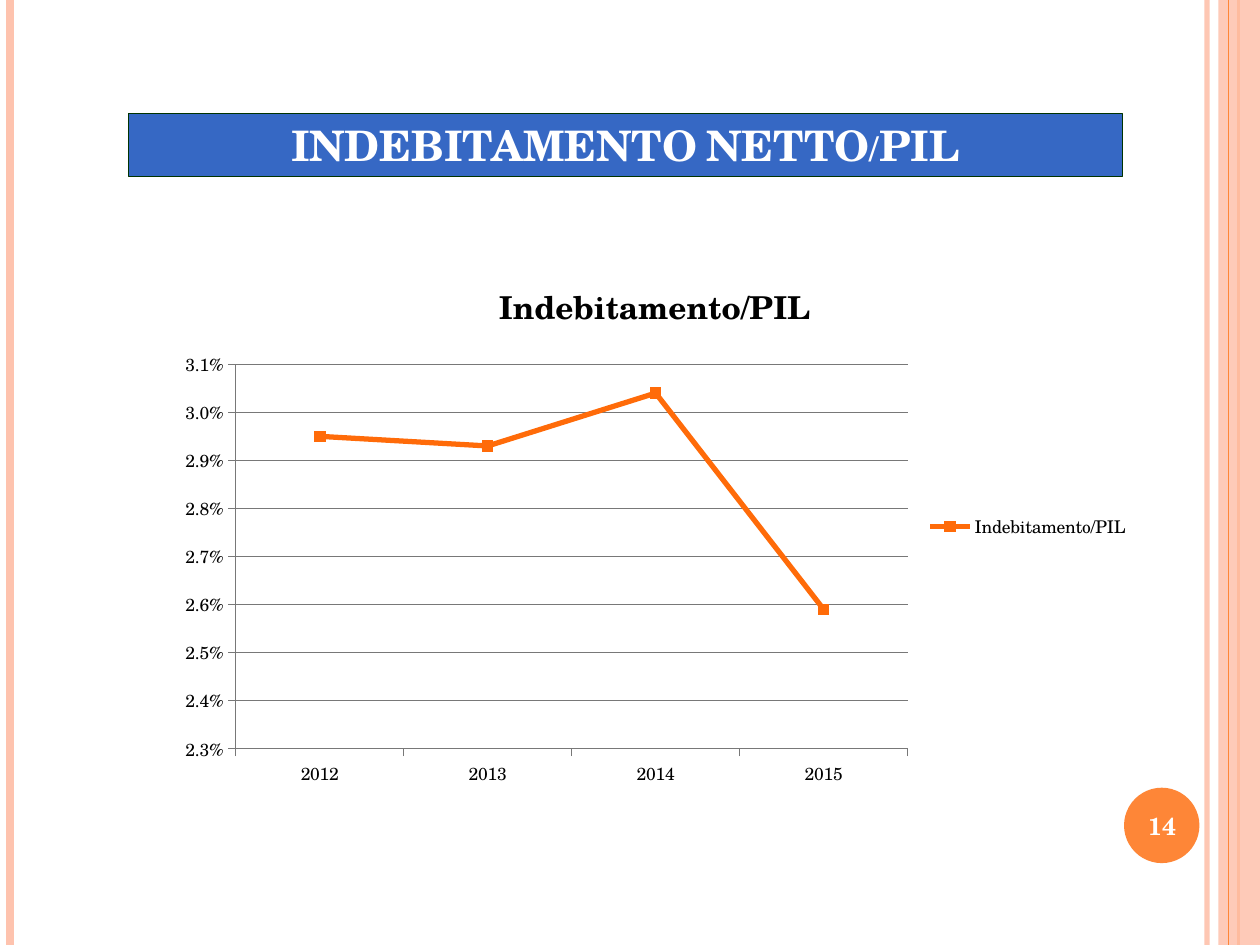
from lxml import etree
from pptx import Presentation
from pptx.chart.data import CategoryChartData
from pptx.dml.color import RGBColor
from pptx.enum.chart import XL_CHART_TYPE, XL_LEGEND_POSITION, XL_MARKER_STYLE, XL_TICK_MARK
from pptx.enum.shapes import MSO_CONNECTOR, MSO_SHAPE
from pptx.enum.text import MSO_ANCHOR, PP_ALIGN
from pptx.oxml import parse_xml
from pptx.oxml.ns import nsdecls, qn
from pptx.util import Cm, Pt

RECTANGLE, OVAL = MSO_SHAPE.RECTANGLE, MSO_SHAPE.OVAL
STRAIGHT = MSO_CONNECTOR.STRAIGHT
CENTER = PP_ALIGN.CENTER
MIDDLE, BOTTOM = MSO_ANCHOR.MIDDLE, MSO_ANCHOR.BOTTOM
LINE_MARKERS = XL_CHART_TYPE.LINE_MARKERS
SQUARE = XL_MARKER_STYLE.SQUARE
LEGEND_RIGHT = XL_LEGEND_POSITION.RIGHT
TICK_OUTSIDE, TICK_NONE = XL_TICK_MARK.OUTSIDE, XL_TICK_MARK.NONE

WIDTH, HEIGHT = 25.4, 19.05
FONT = "TeX Gyre Schola"
PEACH, ORANGE, BRIGHT_ORANGE = "FEC3AE", "FE8637", "FF6B09"
BLUE, DARK_GREEN, GRAY = "3668C4", "003300", "787878"
WHITE, BLACK = "FFFFFF", "000000"


def color(hex_string):
    return RGBColor.from_string(hex_string)


class SlideBuilder:
    """Holds the style and the current slide."""

    def __init__(self, slide, font):
        self.slide = slide
        self.font = font

    def style_font(self, font, size, hex_string, bold=False):
        font.name = self.font
        font.size = Pt(size)
        font.bold = bold
        font.color.rgb = color(hex_string)

    def style_line(self, line, hex_string, width):
        line.color.rgb = color(hex_string)
        line.width = Pt(width)

    def set_opacity(self, shape, percent):
        fill_color = shape._element.spPr.find(".//" + qn("a:srgbClr"))
        alpha = etree.SubElement(fill_color, qn("a:alpha"))
        alpha.set("val", str(percent * 1000))

    def vertical_line(self, x, hex_string, width, opacity=100):
        line = self.slide.shapes.add_connector(STRAIGHT, Cm(x), Cm(0), Cm(x), Cm(HEIGHT))
        self.style_line(line.line, hex_string, width)
        etree.SubElement(line._element.spPr, qn("a:effectLst"))
        if opacity < 100:
            self.set_opacity(line, opacity)

    def shape(self, kind, left, top, width, height, fill, outline=None, opacity=100):
        shape = self.slide.shapes.add_shape(kind, Cm(left), Cm(top), Cm(width), Cm(height))
        shape.shadow.inherit = False
        shape.fill.solid()
        shape.fill.fore_color.rgb = color(fill)
        if outline:
            self.style_line(shape.line, outline, 0.75)
        else:
            shape.line.fill.background()
        if opacity < 100:
            self.set_opacity(shape, opacity)
        return shape

    def add_text(self, shape, text, size, anchor):
        frame = shape.text_frame
        frame.word_wrap = True
        frame.vertical_anchor = anchor
        paragraph = frame.paragraphs[0]
        paragraph.alignment = CENTER
        run = paragraph.add_run()
        run.text = text
        self.style_font(run.font, size, WHITE, bold=True)
        return run

    def text_box(self, left, top, width, height, text, size):
        box = self.slide.shapes.add_textbox(Cm(left), Cm(top), Cm(width), Cm(height))
        self.add_text(box, text, size, MIDDLE)

    def line_chart(self, left, top, width, height, name, categories, values):
        data = CategoryChartData(number_format="0.0%")
        data.categories = categories
        data.add_series(name, values)
        chart = self.slide.shapes.add_chart(
            LINE_MARKERS, Cm(left), Cm(top), Cm(width), Cm(height), data).chart
        self.style_font(chart.font, 10, BLACK)

        # Title and legend
        chart.has_title = True
        run = chart.chart_title.text_frame.paragraphs[0].add_run()
        run.text = name
        self.style_font(run.font, 18, BLACK, bold=True)
        chart.has_legend = True
        chart.legend.position = LEGEND_RIGHT
        chart.legend.include_in_layout = False

        # Series
        chart.plots[0].vary_by_categories = False
        series = chart.plots[0].series[0]
        series.smooth = False
        self.style_line(series.format.line, BRIGHT_ORANGE, 3)
        series.marker.style = SQUARE
        series.marker.size = 6
        series.marker.format.fill.solid()
        series.marker.format.fill.fore_color.rgb = color(BRIGHT_ORANGE)
        series.marker.format.line.fill.background()

        # Axes
        for axis in (chart.category_axis, chart.value_axis):
            axis.major_tick_mark = TICK_OUTSIDE
            axis.minor_tick_mark = TICK_NONE
            self.style_line(axis.format.line, GRAY, 0.75)
        axis = chart.value_axis
        axis.minimum_scale, axis.maximum_scale, axis.major_unit = 0.023, 0.031, 0.001
        axis.tick_labels.number_format = "0.0%"
        axis.tick_labels.number_format_is_linked = False
        axis.has_major_gridlines = True
        self.style_line(axis.major_gridlines.format.line, GRAY, 0.75)
        self.place_plot(chart, x=0.07, y=0.2, w=0.69, h=0.71)

    def place_plot(self, chart, **fractions):
        plot_area = chart._chartSpace.chart.plotArea
        for layout in plot_area.findall(qn("c:layout")):
            plot_area.remove(layout)
        sizes = "".join(f'<c:{key} val="{value}"/>' for key, value in fractions.items())
        plot_area.insert(0, parse_xml(
            f'<c:layout {nsdecls("c")}><c:manualLayout><c:layoutTarget val="inner"/>'
            f'<c:xMode val="edge"/><c:yMode val="edge"/>{sizes}'
            '</c:manualLayout></c:layout>'))


def main():
    presentation = Presentation()
    presentation.slide_width, presentation.slide_height = Cm(WIDTH), Cm(HEIGHT)
    slide = presentation.slides.add_slide(presentation.slide_layouts[6])
    builder = SlideBuilder(slide, FONT)

    # Side bands
    builder.vertical_line(24.33, PEACH, 3, opacity=93)
    builder.vertical_line(0.2, PEACH, 4.5)
    builder.vertical_line(24.97, ORANGE, 1.5)
    builder.shape(RECTANGLE, 24.56, 0, 0.84, HEIGHT, PEACH, opacity=87)
    builder.vertical_line(24.77, ORANGE, 0.75)

    # Title banner
    banner = builder.shape(RECTANGLE, 2.59, 2.29, 20.04, 1.27, BLUE, DARK_GREEN)
    title = builder.add_text(banner, "INDEBITAMENTO NETTO/PIL", 24, BOTTOM)
    title.font._element.set("cap", "small")

    # Deficit to GDP chart
    builder.line_chart(3.38, 5.16, 19.63, 10.92, "Indebitamento/PIL",
                       ["2012", "2013", "2014", "2015"],
                       [0.0295, 0.0293, 0.0304, 0.0259])

    # Page number
    builder.shape(OVAL, 22.66, 15.88, 1.52, 1.52, ORANGE)
    builder.text_box(22.58, 15.93, 1.7, 1.45, "14", 14)

    presentation.save("out.pptx")


if __name__ == "__main__":
    main()
